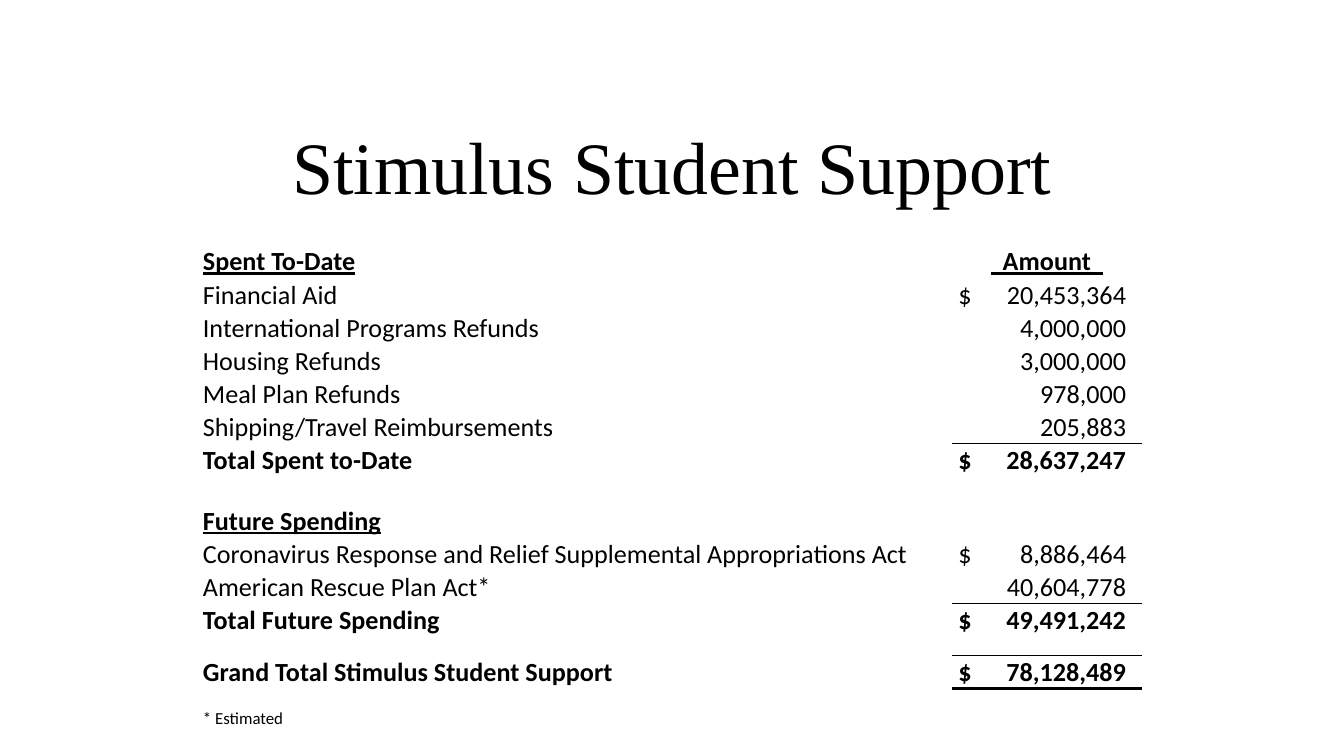
from lxml import etree
from pptx import Presentation, util as u
from pptx.dml.color import RGBColor
from pptx.enum import text
from pptx.oxml.ns import qn

COLORS = {"ink": "000000", "paper": "FFFFFF"}
SLIDE_W = 10
SLIDE_H = SLIDE_W * 9 / 16
TABLE_LEFT, TABLE_TOP = 0.15 * SLIDE_W, 1.82
COLUMNS = (5.58, 1.42)
AMOUNT_INDENT, AMOUNT_TAB = 0.05, 1.25
THIN, THICK = 0.5, 2

TITLE = "Stimulus Student Support"
LINES = [
    ("heading", "Spent To-Date", "  Amount  "),
    ("item", "Financial Aid", "$\t20,453,364"),
    ("item", "International Programs Refunds", "\t4,000,000"),
    ("item", "Housing Refunds", "\t3,000,000"),
    ("item", "Meal Plan Refunds", "\t978,000"),
    ("item", "Shipping/Travel Reimbursements", "\t205,883"),
    ("total", "Total Spent to-Date", "$\t28,637,247"),
    ("gap", "", ""),
    ("section", "Future Spending", ""),
    ("item", "Coronavirus Response and Relief Supplemental Appropriations Act",
     "$\t8,886,464"),
    ("item", "American Rescue Plan Act*", "\t40,604,778"),
    ("total", "Total Future Spending", "$\t49,491,242"),
    ("gap", "", ""),
    ("grand", "Grand Total Stimulus Student Support", "$\t78,128,489"),
    ("gap", "", ""),
    ("note", "* Estimated", ""),
]
HEIGHTS = {"gap": 0.14, "section": 0.31, "note": 0.16}
SIZES = {"gap": 5, "note": 9}
RULES_ABOVE = {"total": THIN, "grand": THIN}
RULES_BELOW = {"grand": THICK}


def write(frame, words, font="Calibri", size=14, bold=False, underline=False,
          align=text.PP_ALIGN.LEFT, tab=None):
    paragraph = frame.paragraphs[0]
    paragraph.text = words
    paragraph.alignment = align
    if tab:
        stops = etree.SubElement(paragraph._p.get_or_add_pPr(), qn("a:tabLst"))
        etree.SubElement(stops, qn("a:tab"), pos=str(u.Inches(tab)), algn="r")
    for part in [paragraph, *paragraph.runs]:
        part.font.name = font
        part.font.size = u.Pt(size)
        part.font.bold = bold
        part.font.underline = underline
        part.font.color.rgb = RGBColor.from_string(COLORS["ink"])


def rule(cell, edge, width):
    line = etree.SubElement(cell._tc.get_or_add_tcPr(), qn("a:" + edge),
                            w=str(u.Pt(width or 0)))
    if width:
        fill = etree.SubElement(line, qn("a:solidFill"))
        etree.SubElement(fill, qn("a:srgbClr"), val=COLORS["ink"])
    else:
        etree.SubElement(line, qn("a:noFill"))


def add_ledger(slide):
    heights = [HEIGHTS.get(kind, 0.24) for kind, _, _ in LINES]
    frame = slide.shapes.add_table(
        len(LINES), len(COLUMNS), u.Inches(TABLE_LEFT), u.Inches(TABLE_TOP),
        u.Inches(sum(COLUMNS)), u.Inches(sum(heights)))
    ledger = frame.table
    ledger.first_row = ledger.horz_banding = False
    for column, width in zip(ledger.columns, COLUMNS):
        column.width = u.Inches(width)

    kinds = [kind for kind, _, _ in LINES]
    for r, (kind, label, amount) in enumerate(LINES):
        ledger.rows[r].height = u.Inches(heights[r])
        before = kinds[r - 1] if r else None
        after = kinds[r + 1] if r + 1 < len(kinds) else None
        above = RULES_ABOVE.get(kind) or RULES_BELOW.get(before)
        below = RULES_BELOW.get(kind) or RULES_ABOVE.get(after)
        for c, words in enumerate((label, amount)):
            cell = ledger.cell(r, c)
            is_header = kind == "heading" and c == 1
            has_tab = "\t" in words
            cell.margin_left = u.Inches(AMOUNT_INDENT if has_tab else 0.01)
            cell.margin_right = cell.margin_top = u.Inches(0.01)
            cell.margin_bottom = 0
            cell.vertical_anchor = text.MSO_ANCHOR.BOTTOM
            for edge, width in (("lnL", None), ("lnR", None),
                                ("lnT", above), ("lnB", below)):
                rule(cell, edge, width if c == 1 else None)
            cell.fill.background()
            write(cell.text_frame, words, size=SIZES.get(kind, 14),
                  bold=kind in ("heading", "section", "total", "grand"),
                  underline=kind in ("heading", "section"),
                  align=text.PP_ALIGN.CENTER if is_header else text.PP_ALIGN.LEFT,
                  tab=AMOUNT_TAB if has_tab else None)


def main():
    deck = Presentation()
    deck.slide_width, deck.slide_height = u.Inches(SLIDE_W), u.Inches(SLIDE_H)
    slide = deck.slides.add_slide(deck.slide_layouts[5])
    slide.background.fill.solid()
    slide.background.fill.fore_color.rgb = RGBColor.from_string(COLORS["paper"])
    title = slide.shapes.title
    title.left, title.top = u.Inches(0.05 * SLIDE_W), u.Inches(0.83)
    title.width, title.height = u.Inches(0.9 * SLIDE_W), u.Inches(0.8)
    title.text_frame.vertical_anchor = text.MSO_ANCHOR.MIDDLE
    write(title.text_frame, TITLE, font="Times New Roman", size=39.6,
          align=text.PP_ALIGN.CENTER)
    add_ledger(slide)
    deck.save("out.pptx")


if __name__ == "__main__":
    main()
